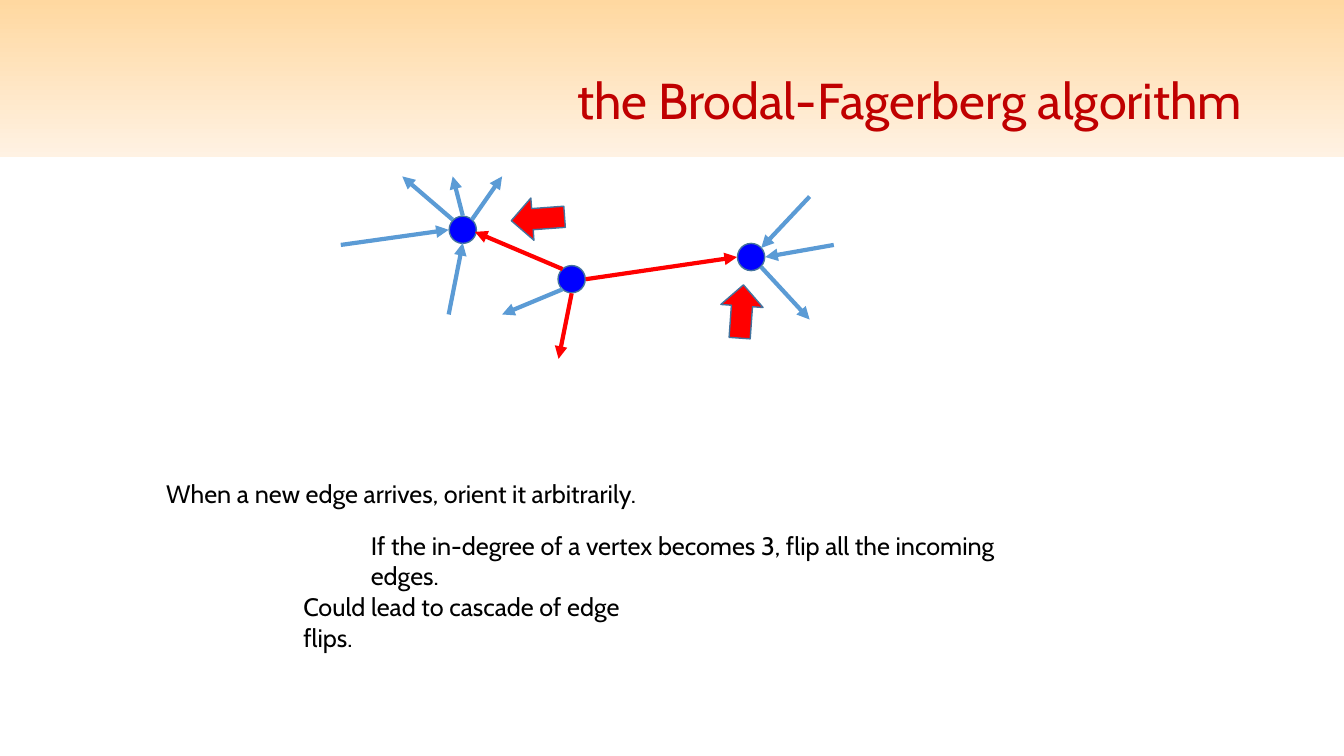
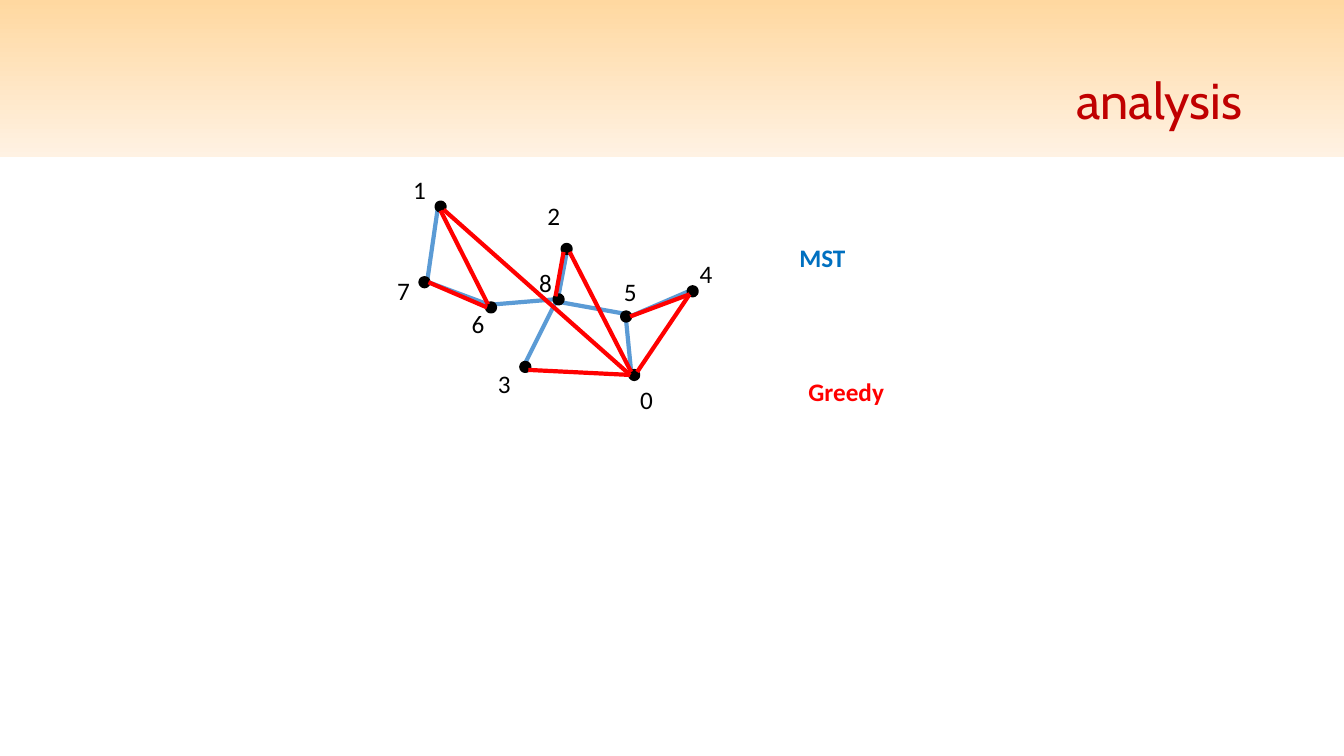
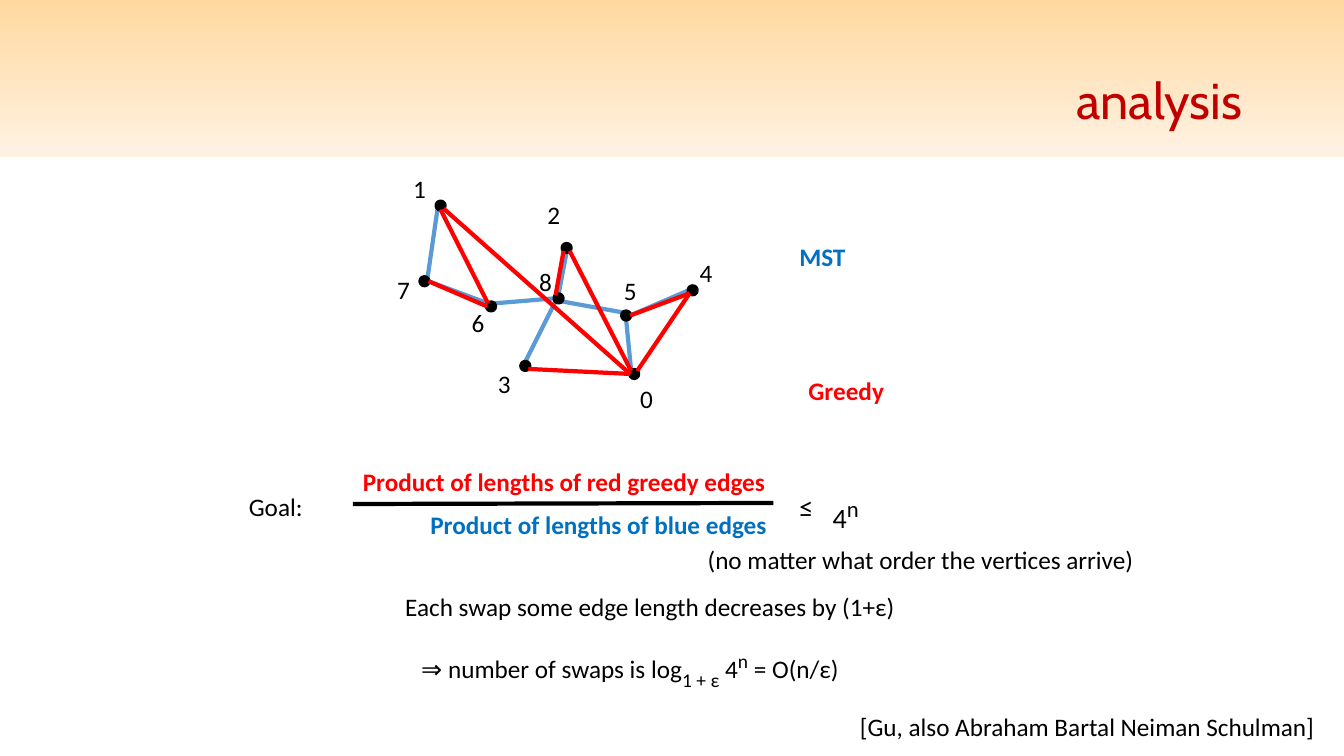
from lxml import etree
from pptx import Presentation
from pptx import util as u
from pptx.dml import color
from pptx.enum import shapes, text
from pptx.oxml import ns

COLORS = {
    "band_top": "FFD8A0", "band_bottom": "FFF2E3", "title": "C00000",
    "black": "000000", "red": "FF0000", "blue": "5B9BD5", "outline": "43739E",
    "vertex": "0000FF", "mst": "0070C0",
}
SLIDE_W, SLIDE_H = 13.33, 7.5
BODY, HEADING = "Calibri", "Cabin"

# Flip example: vertices by centre, edges as (from, to, colour), arrow at "to"
VERTEX_D = 0.27
VERTICES = [(5.67, 2.77), (7.45, 2.55), (4.59, 2.28)]
ARROWS = [
    ((5.81, 2.77), (7.31, 2.55), "red"),
    ((5.58, 2.67), (4.71, 2.3), "red"),
    ((5.67, 2.91), (5.54, 3.56), "red"),
    ((5.58, 2.87), (4.98, 3.12), "blue"),
    ((7.55, 2.65), (8.03, 3.17), "blue"),
    ((8.27, 2.43), (7.59, 2.55), "blue"),
    ((8.03, 1.95), (7.55, 2.46), "blue"),
    ((4.45, 3.12), (4.59, 2.41), "blue"),
    ((3.38, 2.43), (4.45, 2.28), "blue"),
    ((4.49, 2.18), (3.99, 1.75), "blue"),
    ((4.59, 2.14), (4.49, 1.75), "blue"),
    ((4.68, 2.18), (4.98, 1.75), "blue"),
]

# Spanning trees: dot centre and label box corner of each point
POINT_D = 0.08
POINTS = {
    "0": ((6.29, 3.72), (6.25, 3.76)),
    "1": ((4.37, 2.05), (4.0, 1.68)),
    "2": ((5.62, 2.47), (5.33, 1.94)),
    "3": ((5.21, 3.64), (4.84, 3.61)),
    "4": ((6.87, 2.89), (6.84, 2.51)),
    "5": ((6.21, 3.14), (6.09, 2.69)),
    "6": ((4.87, 3.05), (4.58, 3.01)),
    "7": ((4.21, 2.8), (3.84, 2.68)),
    "8": ((5.54, 2.97), (5.25, 2.6)),
}
# Each end is a point and the compass side of its dot where the edge attaches
MST_EDGES = ["7NE 1SW", "7E 6NW", "6NE 8W", "8N 2S",
             "8SE 5NW", "5S 0NW", "5E 4W", "3N 8SW"]
GREEDY_EDGES = ["1SE 0W", "2SE 0NW", "1S 6NW", "4SW 0NE",
                "0W 3SE", "8NW 2SW", "7E 6W", "5E 4SW"]


def rgb(name):
    return color.RGBColor.from_string(COLORS[name])


def add_shape(slide, kind, x, y, w, h, fill, line=None, line_pt=1.0):
    sp = slide.shapes.add_shape(kind, *map(u.Inches, (x, y, w, h)))
    sp.shadow.inherit = False
    sp.fill.solid()
    sp.fill.fore_color.rgb = rgb(fill)
    if line:
        sp.line.color.rgb = rgb(line)
        sp.line.width = u.Pt(line_pt)
    else:
        sp.line.fill.background()
    return sp


def add_dot(slide, center, d, fill, line, line_pt):
    x, y = center
    add_shape(slide, shapes.MSO_SHAPE.OVAL, x - d / 2, y - d / 2, d, d,
              fill, line, line_pt)


def add_line(slide, start, end, line, arrow=False):
    cxn = slide.shapes.add_connector(
        shapes.MSO_CONNECTOR.STRAIGHT, *map(u.Inches, (*start, *end)))
    cxn.line.color.rgb = rgb(line)
    cxn.line.width = u.Pt(3)
    if arrow:
        ln = cxn.line._get_or_add_ln()
        etree.SubElement(ln, ns.qn("a:tailEnd"), type="triangle")
    etree.SubElement(cxn._element.spPr, ns.qn("a:effectLst"))


def add_text(slide, x, y, w, runs, h=0.4, font=BODY, size=18, fill="black",
             bold=False, wrap=False):
    """Add one paragraph; runs is a string or a list of (text, size, baseline %)."""
    sp = slide.shapes.add_textbox(*map(u.Inches, (x, y, w, h)))
    tf = sp.text_frame
    tf.word_wrap = wrap
    tf.auto_size = text.MSO_AUTO_SIZE.SHAPE_TO_FIT_TEXT
    p = tf.paragraphs[0]
    p.font.name = font
    p.font.size = u.Pt(size)
    p.font.bold = bold
    p.font.color.rgb = rgb(fill)
    if isinstance(runs, str):
        p.add_run().text = runs
        return sp
    for content, run_size, baseline in runs:
        r = p.add_run()
        r.text = content
        r.font.size = u.Pt(run_size)
        if baseline:
            r.font._element.set("baseline", str(baseline * 1000))
    return sp


def add_slide(prs, title):
    """Add a slide with the gradient band and its right-aligned title."""
    slide = prs.slides.add_slide(prs.slide_layouts[6])
    band = add_shape(slide, shapes.MSO_SHAPE.RECTANGLE, 0, 0, SLIDE_W, 1.56,
                     "band_top")
    band.fill.gradient()
    band.fill.gradient_angle = 270
    for stop, name in zip(band.fill.gradient_stops, ("band_top", "band_bottom")):
        stop.color.rgb = rgb(name)
    sp = add_text(slide, 0.92, 0.3, 11.5, title, h=1.45, font=HEADING, size=36,
                  fill="title", wrap=True)
    tf = sp.text_frame
    tf.auto_size = text.MSO_AUTO_SIZE.NONE
    tf.vertical_anchor = text.MSO_ANCHOR.MIDDLE
    p = tf.paragraphs[0]
    p.alignment = text.PP_ALIGN.RIGHT
    p.line_spacing = 0.9
    return slide


def edge_end(end, dy):
    """Return the place on a dot's rim for an end such as 7NE."""
    (x, y), _ = POINTS[end[0]]
    sides = end[1:]
    reach = POINT_D / 2 if len(sides) == 1 else 0.03
    x += reach * (("E" in sides) - ("W" in sides))
    y += reach * (("S" in sides) - ("N" in sides))
    return x, y + dy


def add_edges(slide, edges, line, dy):
    for edge in edges:
        start, end = (edge_end(e, dy) for e in edge.split())
        add_line(slide, start, end, line)


def add_trees(slide, dy=0.0):
    """Draw both spanning trees, moved down by dy."""
    add_edges(slide, MST_EDGES, "blue", dy)
    for (x, y), _ in POINTS.values():
        add_dot(slide, (x, y + dy), POINT_D, "black", "black", 3)
    add_edges(slide, GREEDY_EDGES, "red", dy)
    for label, (_, (x, y)) in POINTS.items():
        add_text(slide, x, y + dy, 0.33, label)
    add_text(slide, 7.83, 2.35 + dy, 0.66, "MST", fill="mst", bold=True)
    add_text(slide, 7.92, 3.68 + dy, 0.96, "Greedy", fill="red", bold=True)


def add_algorithm_slide(prs):
    slide = add_slide(prs, "the Brodal-Fagerberg algorithm")
    for center in VERTICES:
        add_dot(slide, center, VERTEX_D, "vertex", "outline", 1)
    for start, end, line in ARROWS:
        add_line(slide, start, end, line, arrow=True)
    for x, y, angle in ((7.09, 2.88, 274.1), (5.07, 1.96, 175.8)):
        pointer = add_shape(slide, shapes.MSO_SHAPE.RIGHT_ARROW, x, y, 0.53, 0.42,
                            "red", "outline")
        pointer.rotation = angle
    steps = [
        (1.55, 4.7, 4.91, "When a new edge arrives, orient it arbitrarily."),
        (3.58, 5.21, 7.06, "If the in-degree of a vertex becomes 3, "
                           "flip all the incoming edges."),
        (2.91, 5.82, 3.85, "Could lead to cascade of edge flips."),
    ]
    for x, y, w, step in steps:
        add_text(slide, x, y, w, step, font=HEADING, wrap=True)


def add_bound_slide(prs):
    slide = add_slide(prs, "analysis")
    add_trees(slide, dy=-0.01)
    add_text(slide, 2.37, 4.83, 0.74, "Goal:")
    add_text(slide, 3.5, 4.58, 4.23, "Product of lengths of red greedy edges",
             fill="red", bold=True)
    add_line(slide, (3.5, 5), (7.67, 4.99), "black")
    add_text(slide, 4.17, 5, 3.57, "Product of lengths of blue edges",
             fill="mst", bold=True)
    add_text(slide, 7.83, 4.81, 0.34, "≤", h=0.44, size=20)
    add_text(slide, 8.16, 4.81, 0.48, [("4", 20, 0), ("n", 28, 30)], h=0.44, size=20)
    add_text(slide, 6.92, 5.35, 4.48, "(no matter what order the vertices arrive)")
    add_text(slide, 3.92, 5.82, 5.12, "Each swap some edge length decreases by (1+ε)")
    add_text(slide, 4.08, 6.35, 4.5, [
        ("⇒ number of swaps is log", 18, 0), ("1 + ε", 24, -25), (" 4", 18, 0),
        ("n", 24, 30), (" = O(n/ε)", 18, 0)])
    add_text(slide, 8.43, 7.01, 4.76, "[Gu, also Abraham Bartal Neiman Schulman]")


def main():
    prs = Presentation()
    prs.slide_width = u.Inches(SLIDE_W)
    prs.slide_height = u.Inches(SLIDE_H)
    add_algorithm_slide(prs)
    add_trees(add_slide(prs, "analysis"))
    add_bound_slide(prs)
    prs.save("out.pptx")


if __name__ == "__main__":
    main()
